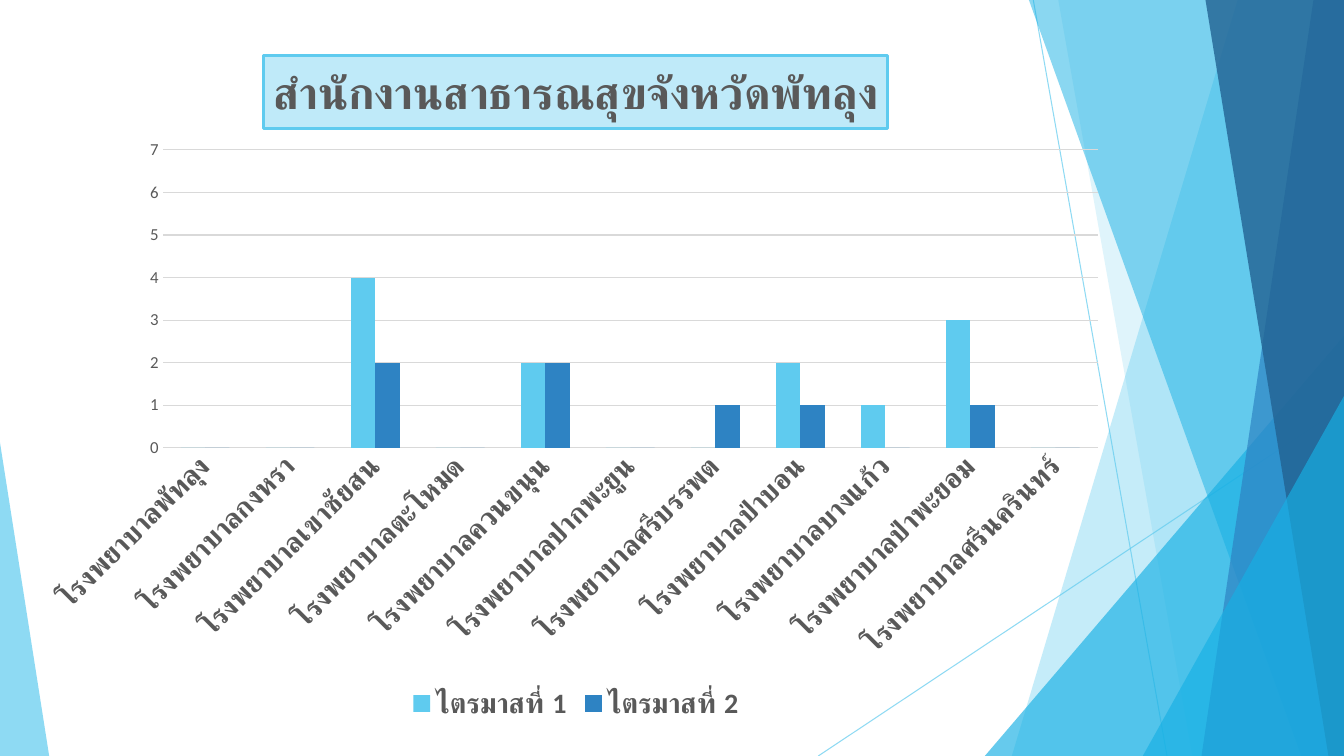
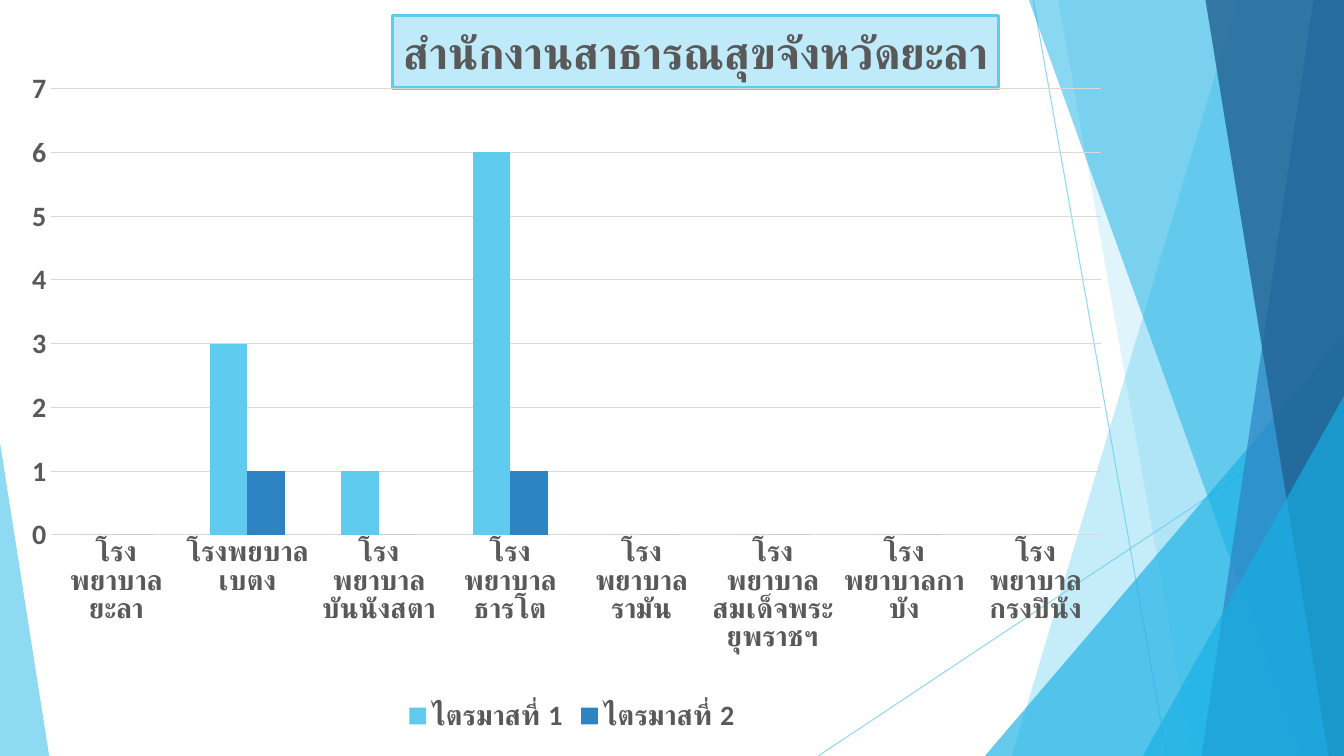
"""Build two slides that chart hospital counts per quarter for two provinces."""
import dataclasses

import lxml.etree
import pptx
import pptx.chart.data
import pptx.dml.color
import pptx.enum.chart
import pptx.enum.shapes
import pptx.enum.text
import pptx.oxml
import pptx.oxml.ns
import pptx.util

Cm = pptx.util.Cm
Pt = pptx.util.Pt
qn = pptx.oxml.ns.qn
RGB = pptx.dml.color.RGBColor.from_string


@dataclasses.dataclass(frozen=True)
class Theme:
    sky: str = "5FCBEF"
    cyan: str = "17B0E4"
    blue: str = "2E83C3"
    navy: str = "226292"
    pale: str = "BFEAF9"
    ink: str = "595959"
    grid: str = "D9D9D9"
    font: str = "Calibri"
    title: int = 32
    label: int = 20
    small: int = 12


theme = Theme()
WIDTH, HEIGHT = 33.87, 19.05


def paint(target, colour, opacity):
    """Give a fill a solid colour with an opacity in percent."""
    target.solid()
    target.fore_color.rgb = RGB(colour)
    for node in target._xPr.iter(qn("a:srgbClr")):
        lxml.etree.SubElement(node, qn("a:alpha")).set("val", str(opacity * 1000))


def style(font, size, bold):
    """Apply the common face and ink to a font."""
    font.name = theme.font
    font.size = Pt(size)
    font.bold = bold
    font.color.rgb = RGB(theme.ink)


deck = pptx.Presentation()
deck.slide_width, deck.slide_height = Cm(WIDTH), Cm(HEIGHT)
for holder in deck.slide_master.placeholders:
    holder.left, holder.width = holder.left * 4 // 3, holder.width * 4 // 3
layout = deck.slide_layouts.get_by_name("Title Only")

provinces = [
    {
        "title": "สำนักงานสาธารณสุขจังหวัดพัทลุง",
        "title_box": (6.65, 1.39, 15.72, 1.84),
        "chart_box": (0.81, 0.91, 27.41, 17.4),
        "plot": (0.12, 0.165, 0.86, 0.431),
        "turn": -45,
        "value_size": theme.small,
        "value_bold": False,
        "hospitals": [
            "โรงพยาบาลพัทลุง", "โรงพยาบาลกงหรา", "โรงพยาบาลเขาชัยสน",
            "โรงพยาบาลตะโหมด", "โรงพยาบาลควนขนุน", "โรงพยาบาลปากพะยูน",
            "โรงพยาบาลศรีบรรพต", "โรงพยาบาลป่าบอน", "โรงพยาบาลบางแก้ว",
            "โรงพยาบาลป่าพะยอม", "โรงพยาบาลศรีนครินทร์",
        ],
        "quarters": [
            (0, 0, 4, 0, 2, 0, 0, 2, 1, 3, 0),
            (0, 0, 2, 0, 2, 0, 1, 1, 0, 1, 0),
        ],
    },
    {
        "title": "สำนักงานสาธารณสุขจังหวัดยะลา",
        "title_box": (9.9, 0.38, 15.27, 1.84),
        "chart_box": (0.61, 0, 27.61, 18.62),
        "plot": (0.024, 0.12, 0.959, 0.604),
        "turn": 0,
        "value_size": theme.label,
        "value_bold": True,
        "hospitals": [
            "โรงพยาบาลยะลา", "โรงพยบาลเบตง", "โรงพยาบาลบันนังสตา",
            "โรงพยาบาลธารโต", "โรงพยาบาลรามัน", "โรงพยาบาลสมเด็จพระยุพราชฯ",
            "โรงพยาบาลกาบัง", "โรงพยาบาลกรงปินัง",
        ],
        "quarters": [
            (0, 3, 1, 6, 0, 0, 0, 0),
            (0, 1, 0, 1, 0, 0, 0, 0),
        ],
    },
]
pages = [deck.slides.add_slide(layout) for _ in provinces]

shards = [
    ("line", (26.04, 0, 29.41, HEIGHT), theme.sky, 70),
    ("line", (WIDTH, 10.24, 20.62, HEIGHT), theme.sky, 70),
    ("band", (31.19, 25.5), theme.sky, 36),
    ("band", (26.67, 30.05), theme.sky, 20),
    ("triangle", (24.82, 8.46, 9.05, 1), theme.cyan, 66),
    ("band", (25.93, 32.79), theme.cyan, 50),
    ("band", (33.1, 30.28), theme.blue, 70),
    ("band", (30.38, 33.48), theme.navy, 80),
    ("triangle", (28.8, 9.98, 5.07, 1), theme.cyan, 66),
    ("triangle", (0, 11.15, 1.24, 0), theme.sky, 70),
]
canvas = pages[0].shapes
for number, (kind, place, colour, opacity) in enumerate(shards, start=101):
    if kind == "line":
        shard = canvas.add_connector(
            pptx.enum.shapes.MSO_CONNECTOR.STRAIGHT, *map(Cm, place))
        shard.line.width = Pt(0.75)
        paint(shard.line.fill, colour, opacity)
        lxml.etree.SubElement(shard.element.spPr, qn("a:effectLst"))
    else:
        if kind == "band":
            top, bottom = place
            outline = canvas.build_freeform(Cm(top), 0)
            outline.add_line_segments([
                (Cm(WIDTH), 0), (Cm(WIDTH), Cm(HEIGHT)), (Cm(bottom), Cm(HEIGHT))])
            shard = outline.convert_to_shape()
        else:
            left, top, width, apex = place
            shard = canvas.add_shape(
                pptx.enum.shapes.MSO_SHAPE.ISOSCELES_TRIANGLE,
                Cm(left), Cm(top), Cm(width), Cm(HEIGHT - top))
            shard.adjustments[0] = apex
        paint(shard.fill, colour, opacity)
        shard.line.fill.background()
        shard.shadow.inherit = False
    shard.element.xpath(".//p:cNvPr")[0].set("id", str(number))
    layout.shapes.element.append(shard.element)

for page, province in zip(pages, provinces):
    box = page.shapes.title
    box.left, box.top, box.width, box.height = map(Cm, province["title_box"])
    box.fill.solid()
    box.fill.fore_color.rgb = RGB(theme.pale)
    box.line.color.rgb = RGB(theme.sky)
    box.line.width = Pt(2.25)
    frame = box.text_frame
    frame.word_wrap = False
    frame.auto_size = pptx.enum.text.MSO_AUTO_SIZE.NONE
    frame.vertical_anchor = pptx.enum.text.MSO_ANCHOR.MIDDLE
    frame.margin_left = frame.margin_right = frame.margin_top = frame.margin_bottom = 0
    para = frame.paragraphs[0]
    para.alignment = pptx.enum.text.PP_ALIGN.CENTER
    span = para.add_run()
    span.text = province["title"]
    style(span.font, theme.title, True)
    complex_face = lxml.etree.SubElement(span.font._element, qn("a:cs"))
    complex_face.set("typeface", theme.font)

    data = pptx.chart.data.CategoryChartData()
    data.categories = province["hospitals"]
    for quarter, values in enumerate(province["quarters"], start=1):
        data.add_series(f"ไตรมาสที่ {quarter}", values)
    chart = page.shapes.add_chart(
        pptx.enum.chart.XL_CHART_TYPE.COLUMN_CLUSTERED,
        *map(Cm, province["chart_box"]), data).chart
    chart.has_title = False
    style(chart.font, theme.label, True)

    plot = chart.plots[0]
    plot.gap_width = 150
    plot.overlap = 0
    plot.vary_by_categories = False
    for series, colour in zip(plot.series, (theme.sky, theme.blue)):
        series.format.fill.solid()
        series.format.fill.fore_color.rgb = RGB(colour)

    names, counts = chart.category_axis, chart.value_axis
    for axis in (names, counts):
        axis.major_tick_mark = pptx.enum.chart.XL_TICK_MARK.NONE
        axis.minor_tick_mark = pptx.enum.chart.XL_TICK_MARK.NONE
        axis.format.line.fill.background()
    style(names.tick_labels.font, theme.label, True)
    names._element.txPr.bodyPr.set("rot", str(province["turn"] * 60000))
    style(counts.tick_labels.font, province["value_size"], province["value_bold"])
    counts.minimum_scale, counts.maximum_scale, counts.major_unit = 0, 7, 1
    counts.major_gridlines.format.line.color.rgb = RGB(theme.grid)
    counts.major_gridlines.format.line.width = Pt(0.75)

    chart.has_legend = True
    chart.legend.position = pptx.enum.chart.XL_LEGEND_POSITION.BOTTOM
    chart.legend.include_in_layout = False
    style(chart.legend.font, theme.label, True)

    area = chart._chartSpace.chart.plotArea
    for old in area.findall(qn("c:layout")):
        area.remove(old)
    spot = pptx.oxml.parse_xml(
        f'<c:layout {pptx.oxml.ns.nsdecls("c")}><c:manualLayout/></c:layout>')
    settings = [("layoutTarget", "inner"), ("xMode", "edge"), ("yMode", "edge")]
    settings += zip("xywh", province["plot"])
    for tag, value in settings:
        lxml.etree.SubElement(spot[0], qn(f"c:{tag}")).set("val", str(value))
    area.insert(0, spot)

deck.save("out.pptx")
